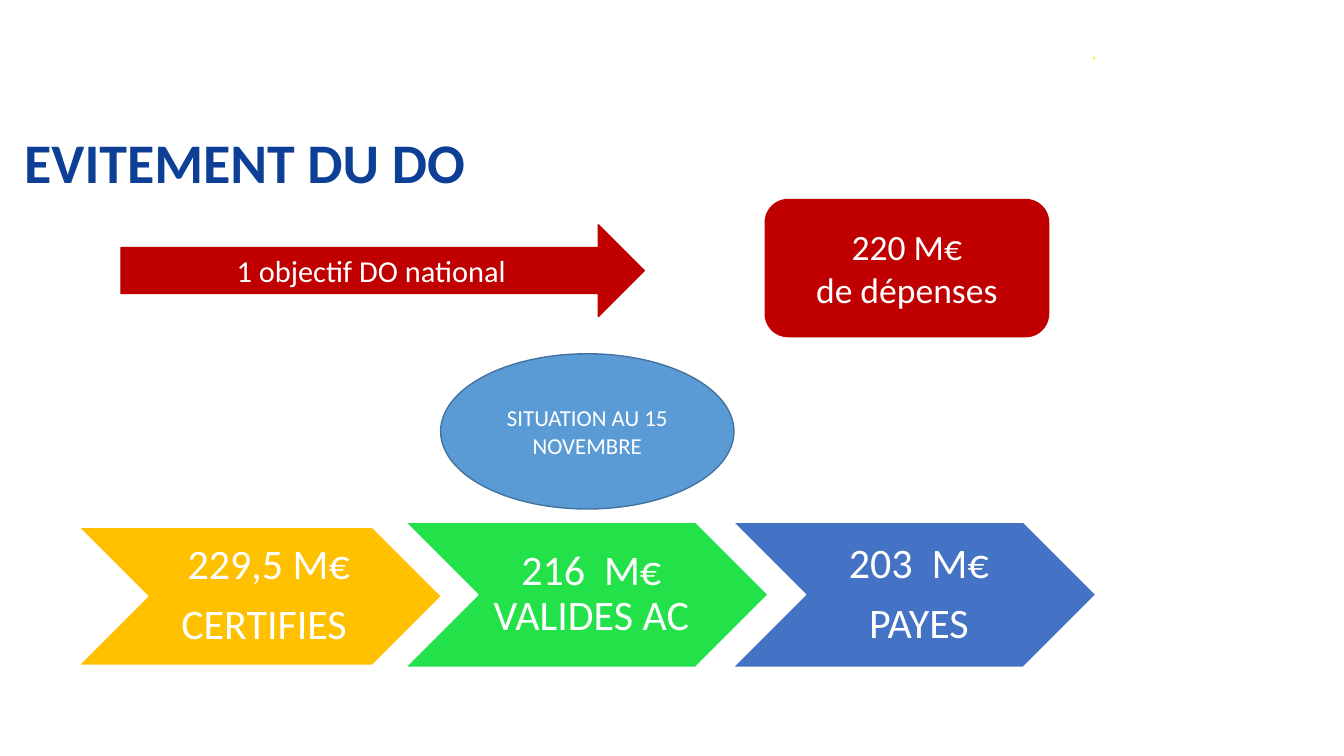
"""Build the DO avoidance slide: national target, situation and amounts."""
from dataclasses import dataclass
from typing import Any

from pptx import Presentation
from pptx.dml.color import RGBColor
from pptx.enum.shapes import MSO_SHAPE
from pptx.enum.text import MSO_ANCHOR, MSO_AUTO_SIZE, PP_ALIGN
from pptx.util import Pt

PX = 9144
WHITE = RGBColor(0xFF, 0xFF, 0xFF)
NAVY = RGBColor(0x0D, 0x3F, 0x96)
RED = RGBColor(0xC0, 0x00, 0x00)
SKY = RGBColor(0x5B, 0x9B, 0xD5)
STEEL = RGBColor(0x43, 0x73, 0x9E)
AMBER = RGBColor(0xFF, 0xC0, 0x00)
GREEN = RGBColor(0x23, 0xE1, 0x48)
BLUE = RGBColor(0x44, 0x72, 0xC4)
YELLOW = RGBColor(0xFF, 0xED, 0x00)

Box = tuple[int, int, int, int]


@dataclass(frozen=True)
class Block:
    kind: MSO_SHAPE
    box: Box
    fill: RGBColor
    line: RGBColor
    lines: tuple[str, ...] = ()
    size: float = 0


@dataclass(frozen=True)
class Stage:
    box: Box
    label_box: Box
    fill: RGBColor
    lines: tuple[str, ...]


BLOCKS = (
    Block(MSO_SHAPE.ROUNDED_RECTANGLE, (759, 198, 281, 136), RED, RED,
          ("220 M€", "de dépenses"), 25.4),
    Block(MSO_SHAPE.RIGHT_ARROW, (120, 223, 519, 91), RED, RED,
          ("1 objectif DO national",), 21.7),
    Block(MSO_SHAPE.OVAL, (437, 351, 291, 154), SKY, STEEL,
          ("SITUATION AU 15 NOVEMBRE",), 16.3),
)
STAGES = (
    Stage((78, 523, 360, 137), (146, 523, 223, 137), AMBER, (" 229,5 M€", "CERTIFIES")),
    Stage((402, 518, 360, 144), (474, 518, 216, 144), GREEN, ("216  M€ VALIDES AC",)),
    Stage((727, 518, 360, 144), (799, 518, 216, 144), BLUE, ("203  M€", "PAYES")),
)
STAR = ((1085, 58), (1086, 59), (1086, 57), (1087, 57), (1086, 57), (1085, 55),
        (1085, 57), (1084, 57), (1085, 57), (1084, 59))
STAGE_SIZE = 30
STAGE_FRAME = {"margin_left": 13 * PX, "margin_top": 4 * PX,
               "margin_right": 4 * PX, "margin_bottom": 4 * PX}
STAGE_PARAGRAPH = {"line_spacing": 0.9, "space_after": Pt(0.35 * STAGE_SIZE)}
TITLE_FRAME = {"margin_left": 0, "margin_top": 0, "margin_right": 0, "margin_bottom": 0,
               "vertical_anchor": MSO_ANCHOR.TOP, "auto_size": MSO_AUTO_SIZE.NONE}
TITLE_PARAGRAPH = {"alignment": PP_ALIGN.LEFT, "line_spacing": Pt(23.7)}


def apply(target: Any, values: dict[str, Any]) -> None:
    """Set each named attribute on the target."""
    for name, value in values.items():
        setattr(target, name, value)


def emu(box: Box) -> list[int]:
    """Turn px lengths into EMU."""
    return [v * PX for v in box]


def write(tf: Any, lines: tuple[str, ...], size: float, color: RGBColor = WHITE,
          frame: dict[str, Any] | None = None,
          paragraph: dict[str, Any] | None = None, bold: bool = False) -> None:
    """Write one formatted paragraph per line."""
    apply(tf, {"word_wrap": True, "vertical_anchor": MSO_ANCHOR.MIDDLE} | (frame or {}))
    for i, line in enumerate(lines):
        p = tf.add_paragraph() if i else tf.paragraphs[0]
        apply(p, {"alignment": PP_ALIGN.CENTER} | (paragraph or {}))
        r = p.add_run()
        r.text = line
        apply(r.font, {"name": "Calibri", "size": Pt(size), "bold": bold})
        r.font.color.rgb = color


def paint(sp: Any, fill: RGBColor, line: RGBColor | None = None) -> None:
    """Give a shape a flat fill and an optional 1 pt outline."""
    sp.shadow.inherit = False
    sp.fill.solid()
    sp.fill.fore_color.rgb = fill
    if line is None:
        sp.line.fill.background()
    else:
        sp.line.color.rgb = line
        sp.line.width = Pt(1)


def draw_block(s: Any, block: Block) -> None:
    """Draw a preset shape with its text."""
    sp = s.shapes.add_shape(block.kind, *emu(block.box))
    paint(sp, block.fill, block.line)
    if block.lines:
        write(sp.text_frame, block.lines, block.size)


def draw_stage(s: Any, stage: Stage) -> None:
    """Draw a chevron and the label over it."""
    draw_block(s, Block(MSO_SHAPE.CHEVRON, stage.box, stage.fill, WHITE))
    label = s.shapes.add_textbox(*emu(stage.label_box))
    write(label.text_frame, stage.lines, STAGE_SIZE,
          frame=STAGE_FRAME, paragraph=STAGE_PARAGRAPH)


def draw_star(s: Any) -> None:
    """Draw the small star at the top right."""
    builder = s.shapes.build_freeform(*STAR[0], scale=PX)
    builder.add_line_segments(STAR[1:], close=True)
    paint(builder.convert_to_shape(), YELLOW)


def draw_title(s: Any) -> None:
    """Place and format the slide title."""
    title = s.shapes.title
    apply(title, dict(zip(("left", "top", "width", "height"), emu((24, 160, 1059, 38)))))
    write(title.text_frame, ("EVITEMENT DU DO",), 39.9, NAVY,
          TITLE_FRAME, TITLE_PARAGRAPH, bold=True)


def main() -> None:
    """Build and save the slide."""
    prs = Presentation()
    apply(prs, {"slide_width": 1333 * PX, "slide_height": 750 * PX})
    s = prs.slides.add_slide(prs.slide_layouts[5])
    draw_star(s)
    draw_title(s)
    for block in BLOCKS:
        draw_block(s, block)
    for stage in STAGES:
        draw_stage(s, stage)
    prs.save("out.pptx")


if __name__ == "__main__":
    main()
